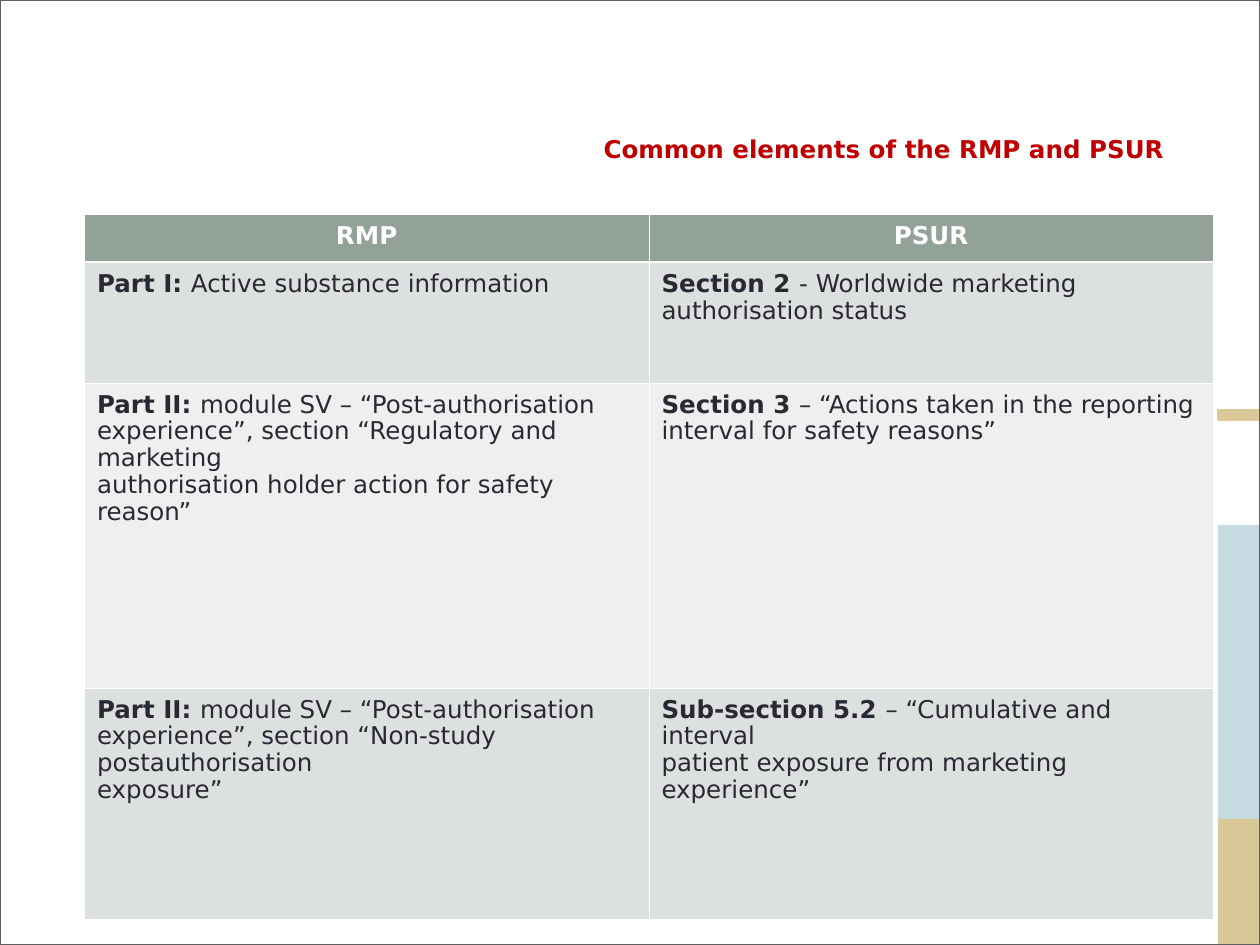
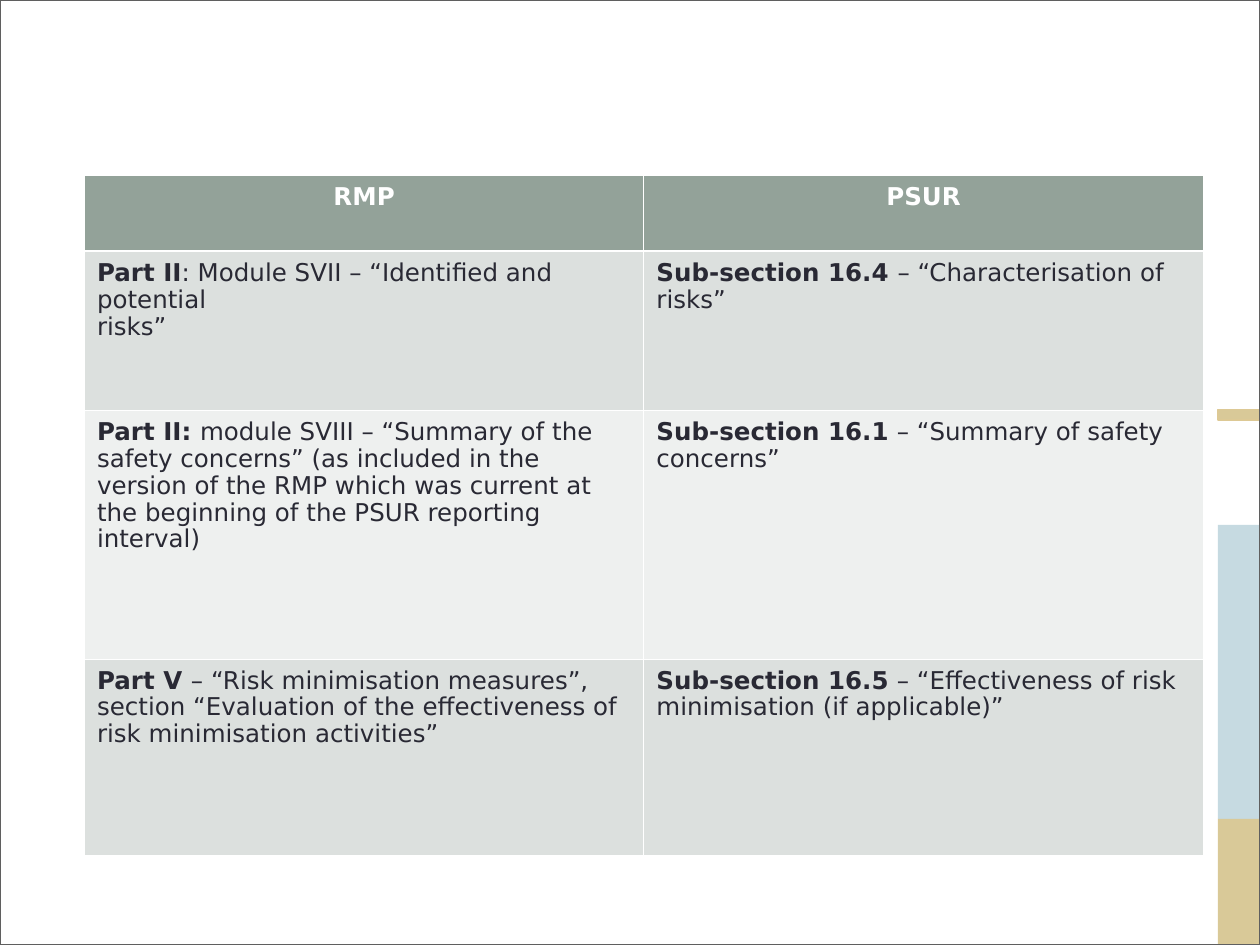
from dataclasses import dataclass
from typing import Optional

import pptx
import pptx.dml.color
import pptx.enum.shapes
import pptx.enum.text
import pptx.oxml.ns
import pptx.util
from lxml import etree

# The slide is a grid of square cells, a tenth of an inch each
COLUMNS, ROWS = 100, 75
CELL = pptx.util.Inches(0.1)


@dataclass(frozen=True)
class Theme:
    font: str = "DejaVu Sans"
    size: float = 14
    line_spacing: float = 0.93
    title: str = "C00000"
    ink: str = "292934"
    white: str = "FFFFFF"
    header: str = "93A299"
    stripes: tuple[str, str] = ("DCE0DE", "EEF0EF")
    blue: str = "C6DAE1"
    sand: str = "D9C998"
    sand_line: str = "DDC995"
    frame: str = "5F5F5F"
    outline: float = 0.75
    thin_rule: float = 0.45
    thick_rule: float = 1.47


THEME = Theme()


@dataclass(frozen=True)
class Area:
    left: float
    top: float
    width: float
    height: float

    def lengths(self) -> list[int]:
        return [round(side * CELL)
                for side in (self.left, self.top, self.width, self.height)]


@dataclass(frozen=True)
class Band:
    area: Area
    fill: Optional[str] = None
    line: Optional[str] = None


@dataclass(frozen=True)
class Entry:
    """A table cell: a bold lead followed by one or more paragraphs."""
    lead: str
    lines: tuple[str, ...]


@dataclass(frozen=True)
class Comparison:
    left: float
    top: float
    column: float
    heights: tuple[float, ...]
    entries: tuple[tuple[Entry, Entry], ...]
    title: Optional[str] = None


# Bands at the right edge and the frame, the same on every slide
EDGE = 96.67
BANDS = (
    Band(Area(EDGE, 41.67, COLUMNS - EDGE, 23.33), THEME.blue),
    Band(Area(EDGE, 65, COLUMNS - EDGE, 10), THEME.sand),
    Band(Area(EDGE, 32.5, COLUMNS - EDGE, 0.83), THEME.sand, THEME.sand_line),
    Band(Area(0, 0, COLUMNS, ROWS), line=THEME.frame),
)
TITLE_AREA = Area(46.9, 10.1, 50, 3.4)
HEADINGS = ("RMP", "PSUR")

# Content
COMPARISONS = (
    Comparison(
        6.7, 17, 44.8, (3.8, 9.6, 24.2, 18.4),
        (
            (Entry("Part I: ", ("Active substance information",)),
             Entry("Section 2 ", ("- Worldwide marketing authorisation status",))),
            (Entry("Part II: ", ("module SV – “Post-authorisation",
                                 "experience”, section “Regulatory and marketing",
                                 "authorisation holder action for safety reason”")),
             Entry("Section 3 ", ("– “Actions taken in the reporting",
                                  "interval for safety reasons”"))),
            (Entry("Part II: ", ("module SV – “Post-authorisation",
                                 "experience”, section “Non-study postauthorisation",
                                 "exposure”")),
             Entry("Sub-section 5.2 ", ("– “Cumulative and interval",
                                        "patient exposure from marketing experience”"))),
        ),
        title="Common elements of the RMP and PSUR",
    ),
    Comparison(
        6.7, 13.9, 44.4, (6.05, 12.65, 19.7, 15.6),
        (
            (Entry("Part II", (": Module SVII – “Identified and potential", "risks”")),
             Entry("Sub-section 16.4 ", ("– “Characterisation of risks”",))),
            (Entry("Part II: ", ("module SVIII – “Summary of the safety concerns” "
                                 "(as included in the version of the RMP which was "
                                 "current at the beginning of the PSUR reporting "
                                 "interval)",)),
             Entry("Sub-section 16.1", (" – “Summary of safety concerns”",))),
            (Entry("Part V ", ("– “Risk minimisation measures”, section “Evaluation "
                               "of the effectiveness of risk minimisation "
                               "activities”",)),
             Entry("Sub-section 16.5", (" – “Effectiveness of risk",
                                        "minimisation (if applicable)”"))),
        ),
    ),
)


def rgb(value: str) -> pptx.dml.color.RGBColor:
    return pptx.dml.color.RGBColor.from_string(value)


def add_span(para, text: str, color: str, bold: bool) -> None:
    span = para.add_run()
    span.text = text
    span.font.name = THEME.font
    span.font.size = pptx.util.Pt(THEME.size)
    span.font.bold = bold
    span.font.color.rgb = rgb(color)


def draw_band(page, band: Band) -> None:
    box = page.shapes.add_shape(pptx.enum.shapes.MSO_SHAPE.RECTANGLE,
                                *band.area.lengths())
    box.shadow.inherit = False
    if band.fill:
        box.fill.solid()
        box.fill.fore_color.rgb = rgb(band.fill)
    else:
        box.fill.background()
    if band.line:
        box.line.color.rgb = rgb(band.line)
        box.line.width = pptx.util.Pt(THEME.outline)
    else:
        box.line.fill.background()


def draw_title(page, text: str) -> None:
    box = page.shapes.title
    box.left, box.top, box.width, box.height = TITLE_AREA.lengths()
    frame = box.text_frame
    frame.word_wrap = True
    frame.auto_size = pptx.enum.text.MSO_AUTO_SIZE.SHAPE_TO_FIT_TEXT
    frame.vertical_anchor = pptx.enum.text.MSO_ANCHOR.TOP
    para = frame.paragraphs[0]
    para.alignment = pptx.enum.text.PP_ALIGN.LEFT
    add_span(para, text, THEME.title, True)


def style_cell(cell, fill: str, top: float, bottom: float) -> None:
    cell.margin_left = cell.margin_right = pptx.util.Inches(0.1)
    cell.margin_top = pptx.util.Inches(0.07)
    cell.margin_bottom = pptx.util.Inches(0.05)
    cell.fill.solid()
    cell.fill.fore_color.rgb = rgb(fill)
    # Borders stand before the fill in the cell properties
    qn = pptx.oxml.ns.qn
    properties = cell._tc.get_or_add_tcPr()
    widths = {"lnL": THEME.thin_rule, "lnR": THEME.thin_rule,
              "lnT": top, "lnB": bottom}
    for position, (side, width) in enumerate(widths.items()):
        rule = etree.Element(qn(f"a:{side}"), w=str(pptx.util.Pt(width)))
        paint = etree.SubElement(rule, qn("a:solidFill"))
        etree.SubElement(paint, qn("a:srgbClr"), val=THEME.white)
        properties.insert(position, rule)


def cell_para(cell, first: bool):
    frame = cell.text_frame
    para = frame.paragraphs[0] if first else frame.add_paragraph()
    para.line_spacing = THEME.line_spacing
    return para


def fill_heading(cell, text: str) -> None:
    style_cell(cell, THEME.header, THEME.thin_rule, THEME.thick_rule)
    para = cell_para(cell, True)
    para.alignment = pptx.enum.text.PP_ALIGN.CENTER
    add_span(para, text, THEME.white, True)


def fill_entry(cell, entry: Entry, row: int) -> None:
    top = THEME.thick_rule if row == 0 else THEME.thin_rule
    style_cell(cell, THEME.stripes[row % 2], top, THEME.thin_rule)
    for index, line in enumerate(entry.lines):
        para = cell_para(cell, index == 0)
        if index == 0:
            add_span(para, entry.lead, THEME.ink, True)
        add_span(para, line, THEME.ink, False)


def draw_table(page, comparison: Comparison) -> None:
    count = len(HEADINGS)
    area = Area(comparison.left, comparison.top,
                comparison.column * count, sum(comparison.heights))
    table = page.shapes.add_table(len(comparison.heights), count,
                                  *area.lengths()).table
    for column in table.columns:
        column.width = round(comparison.column * CELL)
    for row, height in zip(table.rows, comparison.heights):
        row.height = round(height * CELL)
    for column, heading in enumerate(HEADINGS):
        fill_heading(table.cell(0, column), heading)
    for row, pair in enumerate(comparison.entries):
        for column, entry in enumerate(pair):
            fill_entry(table.cell(row + 1, column), entry, row)


def add_page(deck, comparison: Comparison) -> None:
    layout = "Title Only" if comparison.title else "Blank"
    page = deck.slides.add_slide(deck.slide_layouts.get_by_name(layout))
    for band in BANDS:
        draw_band(page, band)
    if comparison.title:
        draw_title(page, comparison.title)
    draw_table(page, comparison)


def main() -> None:
    deck = pptx.Presentation()
    deck.slide_width = COLUMNS * CELL
    deck.slide_height = ROWS * CELL
    for comparison in COMPARISONS:
        add_page(deck, comparison)
    deck.save("out.pptx")


if __name__ == "__main__":
    main()
